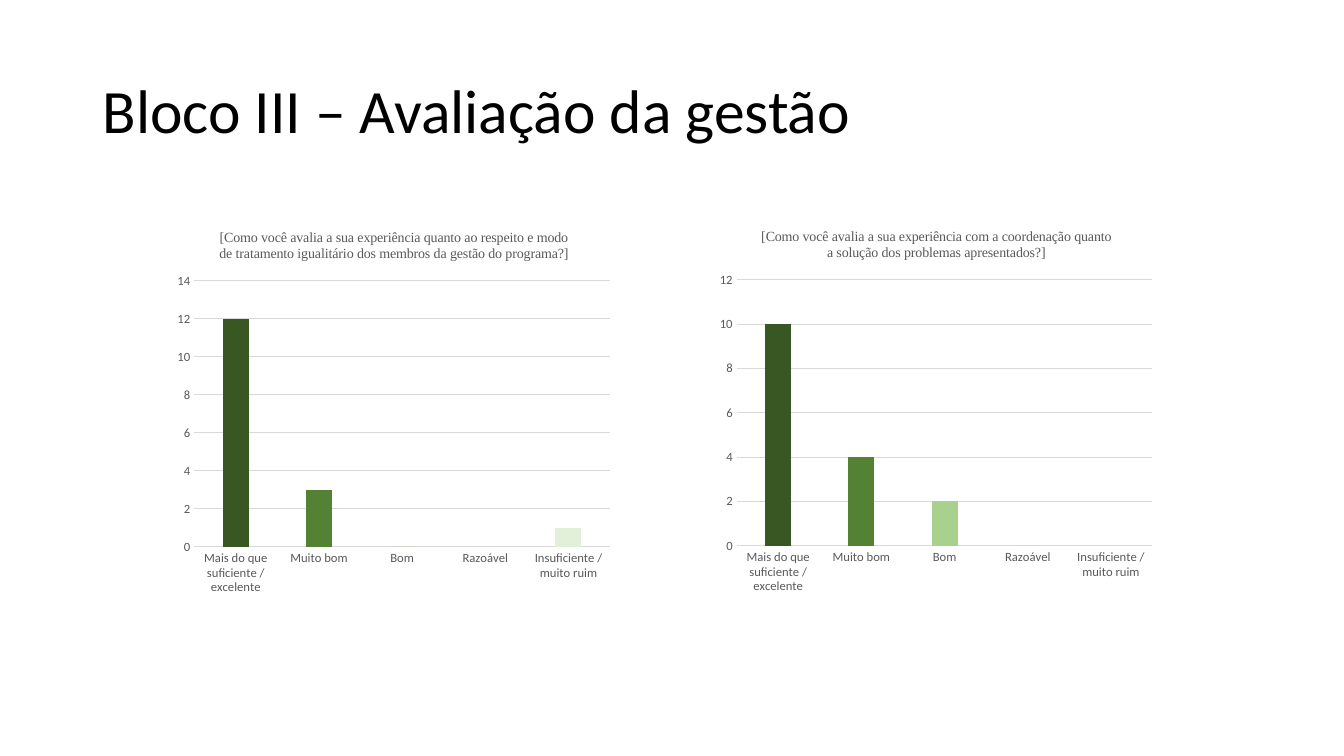
from dataclasses import dataclass

from pptx import Presentation
from pptx.chart.data import CategoryChartData
from pptx.dml.color import RGBColor
from pptx.enum.chart import XL_CHART_TYPE, XL_TICK_MARK
from pptx.enum.text import MSO_ANCHOR
from pptx.util import Inches, Pt

COLUMNS = XL_CHART_TYPE.COLUMN_CLUSTERED
NO_TICK = XL_TICK_MARK.NONE
MIDDLE = MSO_ANCHOR.MIDDLE

SLIDE_TITLE = "Bloco III – Avaliação da gestão"
RATINGS = [
    "Mais do que suficiente / excelente",
    "Muito bom",
    "Bom",
    "Razoável",
    "Insuficiente / muito ruim",
]
QUESTIONS = [
    {
        "title": "[Como você avalia a sua experiência quanto ao respeito e modo "
                 "de tratamento igualitário dos membros da gestão do programa?]",
        "answers": (12, 3, 0, 0, 1),
        "position": (1.67, 2.11),
        "axis_maximum": 14,
    },
    {
        "title": "[Como você avalia a sua experiência com a coordenação quanto "
                 "a solução dos problemas apresentados?]",
        "answers": (10, 4, 2, 0, 0),
        "position": (7.05, 2.1),
        "axis_maximum": 12,
    },
]
CHART_SIZE = (4.47, 3.87)


@dataclass(frozen=True)
class Theme:
    font: str = "Calibri"
    question_font: str = "Times New Roman"
    title_size: float = 44
    question_size: float = 10
    axis_size: float = 9
    title_color: str = "000000"
    label_color: str = "595959"
    grid_color: str = "D9D9D9"
    grid_width: float = 0.75
    rating_colors: tuple = ("385723", "548235", "A9D18E", "C5E0B4", "E2F0D9")


THEME = Theme()


def style_font(font, name, size, color):
    font.name = name
    font.size = Pt(size)
    font.bold = False
    font.color.rgb = RGBColor.from_string(color)


def write_text(frame, text, *, name, size, color, line_spacing=None):
    paragraph = frame.paragraphs[0]
    if line_spacing:
        paragraph.line_spacing = line_spacing
    run = paragraph.add_run()
    run.text = text
    style_font(run.font, name, size, color)


def style_line(line):
    line.color.rgb = RGBColor.from_string(THEME.grid_color)
    line.width = Pt(THEME.grid_width)


def add_title(slide):
    box = slide.shapes.add_textbox(Inches(0.92), Inches(0.4), Inches(11.5), Inches(1.45))
    frame = box.text_frame
    frame.word_wrap = True
    frame.vertical_anchor = MIDDLE
    write_text(frame, SLIDE_TITLE, name=THEME.font, size=THEME.title_size,
               color=THEME.title_color, line_spacing=0.9)


def add_question_chart(slide, question):
    data = CategoryChartData()
    data.categories = RATINGS
    data.add_series(question["title"], question["answers"])
    left, top = map(Inches, question["position"])
    width, height = map(Inches, CHART_SIZE)
    chart = slide.shapes.add_chart(COLUMNS, left, top, width, height, data).chart

    style_font(chart.font, THEME.font, THEME.question_size, THEME.title_color)
    chart.has_legend = False
    chart.has_title = True
    chart.chart_title.include_in_layout = False
    write_text(chart.chart_title.text_frame, question["title"], name=THEME.question_font,
               size=THEME.question_size, color=THEME.label_color)

    for axis in (chart.category_axis, chart.value_axis):
        axis.major_tick_mark = NO_TICK
        axis.minor_tick_mark = NO_TICK
        style_font(axis.tick_labels.font, THEME.font, THEME.axis_size, THEME.label_color)
    style_line(chart.category_axis.format.line)
    value_axis = chart.value_axis
    value_axis.format.line.fill.background()
    value_axis.minimum_scale = 0
    value_axis.maximum_scale = question["axis_maximum"]
    value_axis.major_unit = 2
    value_axis.has_major_gridlines = True
    style_line(value_axis.major_gridlines.format.line)

    plot = chart.plots[0]
    plot.gap_width = 219
    plot.overlap = -27
    plot.vary_by_categories = False
    for index, color in enumerate(THEME.rating_colors):
        fill = plot.series[0].points[index].format.fill
        fill.solid()
        fill.fore_color.rgb = RGBColor.from_string(color)


def main():
    presentation = Presentation()
    presentation.slide_width = Inches(13.33)
    presentation.slide_height = Inches(7.5)
    slide = presentation.slides.add_slide(presentation.slide_layouts[6])
    add_title(slide)
    for question in QUESTIONS:
        add_question_chart(slide, question)
    presentation.save("out.pptx")


if __name__ == "__main__":
    main()
